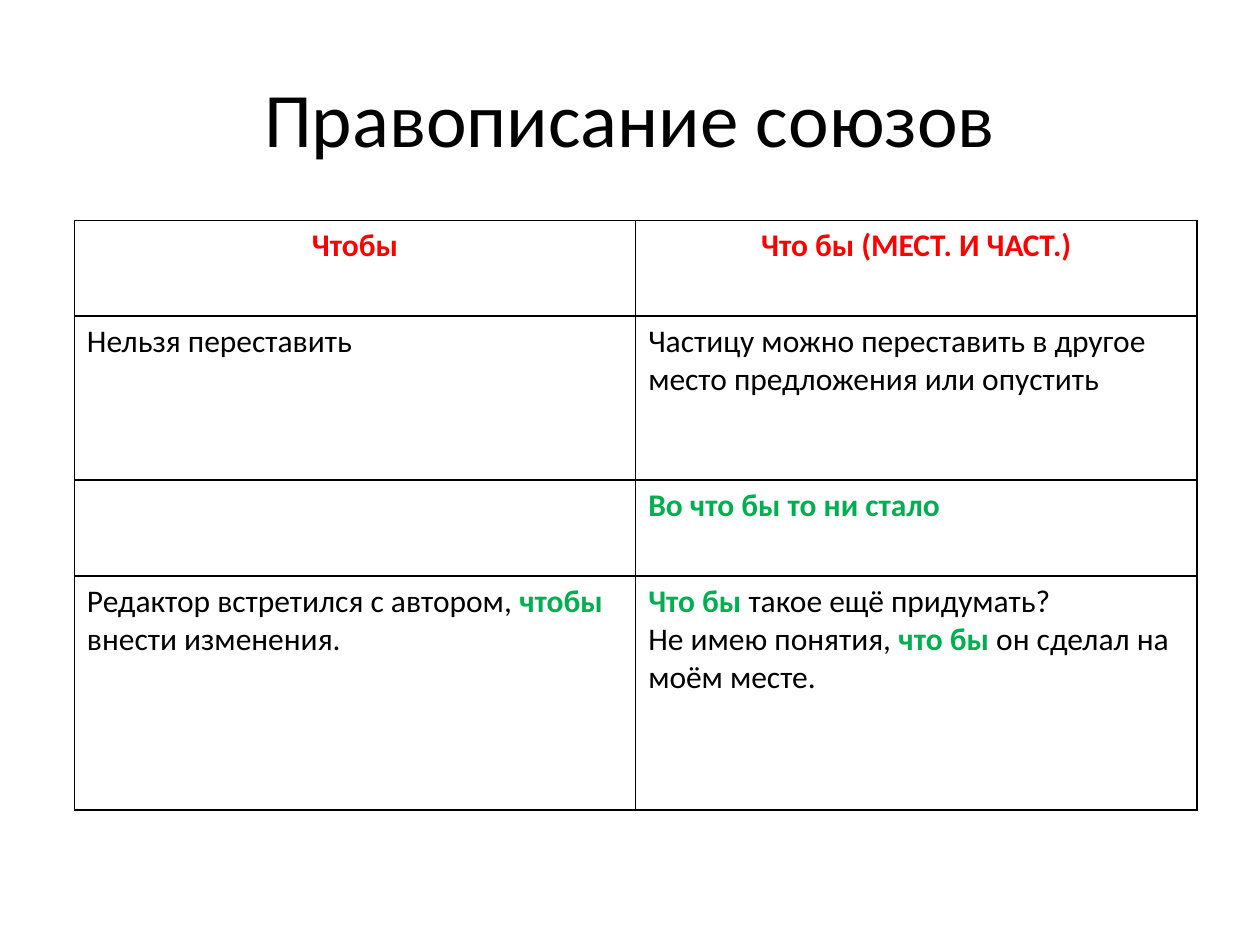
from lxml import etree
from pptx import Presentation
from pptx.dml.color import RGBColor
from pptx.enum.text import MSO_ANCHOR, PP_ALIGN
from pptx.oxml.ns import qn
from pptx.util import Inches, Pt

CENTER, LEFT = PP_ALIGN.CENTER, PP_ALIGN.LEFT
MIDDLE = MSO_ANCHOR.MIDDLE

THEME = {
    "font": "Calibri",
    "title_size": Pt(44),
    "cell_size": Pt(18),
    "text": RGBColor(0, 0, 0),
    "heading": RGBColor(0xFF, 0, 0),
    "example": RGBColor(0, 0xB0, 0x50),
    "border": "000000",
    "border_width": Pt(1),
}


def add_run(p, text, size, style):
    r = p.add_run()
    r.text = text
    formats = {"name": THEME["font"], "size": size, "bold": style != "text"}
    for name, value in formats.items():
        setattr(r.font, name, value)
    r.font.color.rgb = THEME[style]


def set_borders(cell):
    tcPr = cell._tc.get_or_add_tcPr()
    for i, side in enumerate(("a:lnL", "a:lnR", "a:lnT", "a:lnB")):
        ln = etree.Element(qn(side), w=str(THEME["border_width"]))
        fill = etree.SubElement(ln, qn("a:solidFill"))
        etree.SubElement(fill, qn("a:srgbClr"), val=THEME["border"])
        tcPr.insert(i, ln)


prs = Presentation()
prs.slide_width, prs.slide_height = Inches(10), Inches(7.5)
s = prs.slides.add_slide(prs.slide_layouts[5])

# Title
title = s.shapes.title
box = {"left": 0.5, "top": 0.3, "width": 9, "height": 1.25}
for name, value in box.items():
    setattr(title, name, Inches(value))
tf = title.text_frame
tf.vertical_anchor = MIDDLE
p = tf.paragraphs[0]
p.alignment = CENTER
add_run(p, "Правописание союзов", THEME["title_size"], "text")
p.runs[0].font.bold = False

# Table content: rows of cells, each cell a list of paragraphs made of runs
ROWS = [
    [[[("Чтобы", "heading")]],
     [[("Что бы (МЕСТ. И ЧАСТ.)", "heading")]]],
    [[[("Нельзя переставить", "text")]],
     [[("Частицу можно переставить в другое место предложения или опустить", "text")]]],
    [[],
     [[("Во что бы то ни стало", "example")]]],
    [[[("Редактор встретился с автором,", "text"), (" чтобы ", "example"),
       ("внести изменения.", "text")]],
     [[("Что бы ", "example"), ("такое ещё придумать?", "text")],
      [("Не имею понятия, ", "text"), ("что бы ", "example"),
       ("он сделал на моём месте.", "text")]]],
]
ROW_HEIGHTS = [0.76, 1.3, 0.76, 1.86]

# Table
table = s.shapes.add_table(len(ROWS), 2, Inches(0.59), Inches(1.75),
                           Inches(8.91), Inches(sum(ROW_HEIGHTS))).table
table.first_row = table.horz_banding = False
for row, height in zip(table.rows, ROW_HEIGHTS):
    row.height = Inches(height)

for i, row in enumerate(ROWS):
    for j, paragraphs in enumerate(row):
        cell = table.cell(i, j)
        cell.fill.background()
        set_borders(cell)
        tf = cell.text_frame
        for k, runs in enumerate(paragraphs):
            p = tf.add_paragraph() if k else tf.paragraphs[0]
            p.alignment = CENTER if i == 0 else LEFT
            for text, style in runs:
                add_run(p, text, THEME["cell_size"], style)

prs.save("out.pptx")
